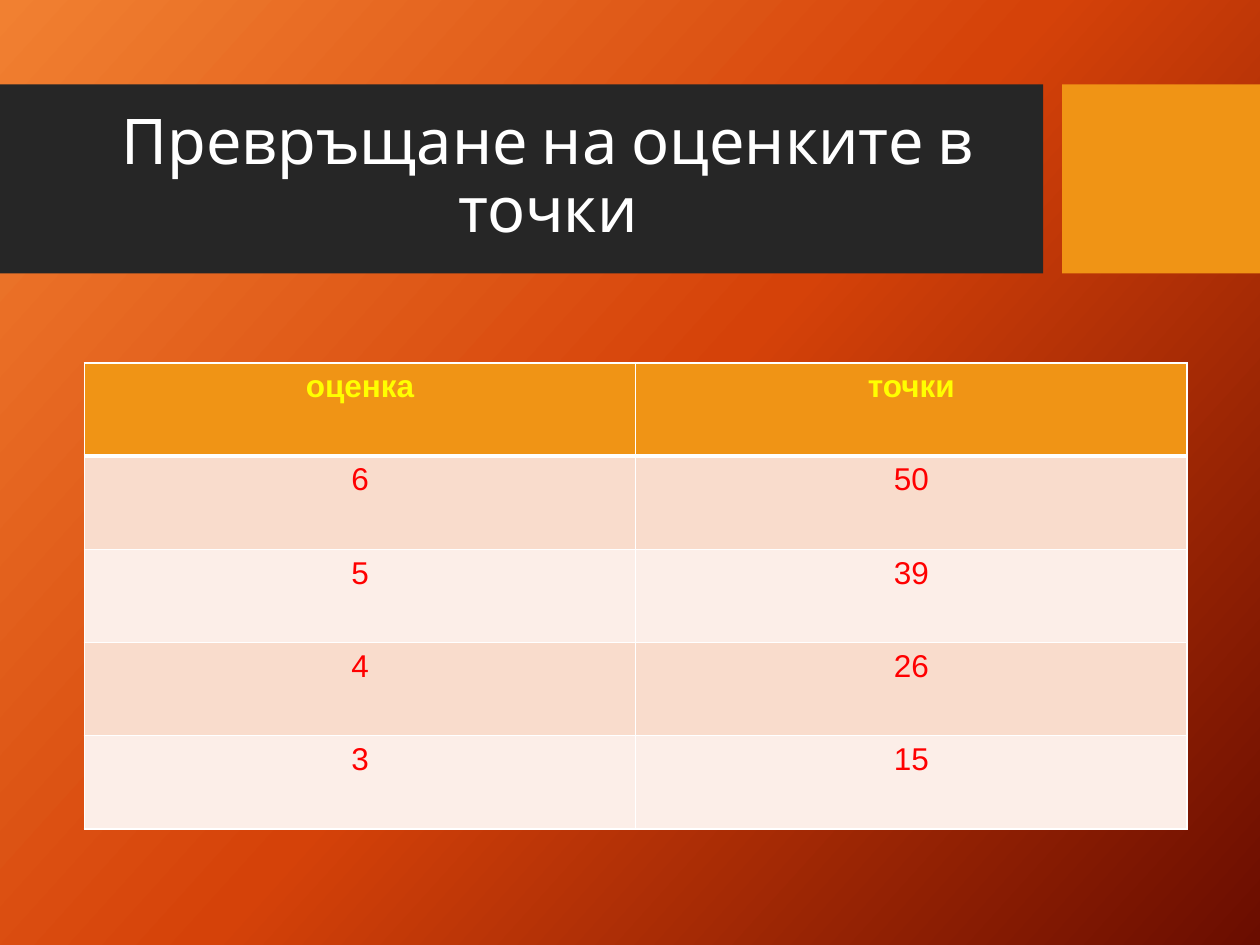
import copy

import pptx
import pptx.dml.color
import pptx.enum.shapes
import pptx.enum.text
import pptx.oxml
import pptx.oxml.ns
import pptx.util

Inches = pptx.util.Inches
Pt = pptx.util.Pt
RGBColor = pptx.dml.color.RGBColor

WHITE = RGBColor(0xFF, 0xFF, 0xFF)
CHARCOAL = RGBColor(0x26, 0x26, 0x26)
AMBER = RGBColor(0xF0, 0x94, 0x15)
YELLOW = RGBColor(0xFF, 0xFF, 0x00)
RED = RGBColor(0xFF, 0x00, 0x00)
PEACH = RGBColor(0xF9, 0xDC, 0xCC)
PALE_PEACH = RGBColor(0xFC, 0xEE, 0xE8)
GLOW = (RGBColor(0xF1, 0x80, 0x31), RGBColor(0xD5, 0x42, 0x09), RGBColor(0x6A, 0x0D, 0x00))

GRADES = [("оценка", "точки"), ("6", "50"), ("5", "39"), ("4", "26"), ("3", "15")]


class GradeSlide:
    title_font = "Cabin"
    table_font = "Arial"

    def __init__(self, slide):
        self.slide = slide

    def background(self, colours, angle):
        fill = self.slide.background.fill
        fill.gradient()
        fill.gradient_angle = 360 - angle
        stop_list = self.slide.element.xpath(".//a:gsLst")[0]
        stop_list.insert(1, copy.deepcopy(stop_list[0]))
        for i, (stop, colour) in enumerate(zip(fill.gradient_stops, colours)):
            stop.color.rgb = colour
            stop.position = i / (len(colours) - 1)

    def block(self, left, top, width, height, colour):
        block = self.slide.shapes.add_shape(
            pptx.enum.shapes.MSO_SHAPE.RECTANGLE,
            Inches(left), Inches(top), Inches(width), Inches(height))
        block.shadow.inherit = False
        block.fill.solid()
        block.fill.fore_color.rgb = colour
        block.line.fill.background()

    def centred_text(self, frame, text, font, size, colour, bold=False):
        frame.text = text
        paragraph = frame.paragraphs[0]
        paragraph.alignment = pptx.enum.text.PP_ALIGN.CENTER
        run_font = paragraph.runs[0].font
        run_font.name = font
        run_font.size = Pt(size)
        run_font.bold = bold
        run_font.color.rgb = colour
        return paragraph

    def title(self, left, top, width, height, text):
        frame = self.slide.shapes.add_textbox(
            Inches(left), Inches(top), Inches(width), Inches(height)).text_frame
        frame.word_wrap = True
        frame.vertical_anchor = pptx.enum.text.MSO_ANCHOR.MIDDLE
        heading = self.centred_text(frame, text, self.title_font, 36, WHITE)
        heading.line_spacing = 0.9

    def borders(self, cell, **widths):
        properties = cell._tc.get_or_add_tcPr()
        for side in "LRTB":
            properties.append(pptx.oxml.parse_xml(
                f'<a:ln{side} {pptx.oxml.ns.nsdecls("a")} w="{Pt(widths.get(side, 1))}">'
                f'<a:solidFill><a:srgbClr val="{WHITE}"/></a:solidFill></a:ln{side}>'))

    def table(self, left, top, width, height, rows):
        table = self.slide.shapes.add_table(
            len(rows), len(rows[0]),
            Inches(left), Inches(top), Inches(width), Inches(height)).table
        for r, row in enumerate(rows):
            for c, text in enumerate(row):
                cell = table.cell(r, c)
                # A thick rule separates the header from the grades
                self.borders(cell, T=3 if r == 1 else 1, B=3 if r == 0 else 1)
                cell.fill.solid()
                if r == 0:
                    cell.fill.fore_color.rgb = AMBER
                else:
                    cell.fill.fore_color.rgb = PEACH if r % 2 else PALE_PEACH
                self.centred_text(cell.text_frame, text, self.table_font, 18,
                                  RED if r else YELLOW, bold=r == 0)


def main():
    presentation = pptx.Presentation()
    presentation.slide_width = Inches(10)
    presentation.slide_height = Inches(7.5)
    page = GradeSlide(presentation.slides.add_slide(presentation.slide_layouts[6]))

    # Background and title band
    page.background(GLOW, 42)
    page.block(0, 0.67, 8.28, 1.5, CHARCOAL)
    page.block(8.43, 0.67, 1.57, 1.5, AMBER)
    page.title(0.58, 0.82, 7.54, 1.18, "Превръщане на оценките в точки")

    # Grades and their points
    page.table(0.67, 2.88, 8.75, 3.7, GRADES)

    presentation.save("out.pptx")


if __name__ == "__main__":
    main()
